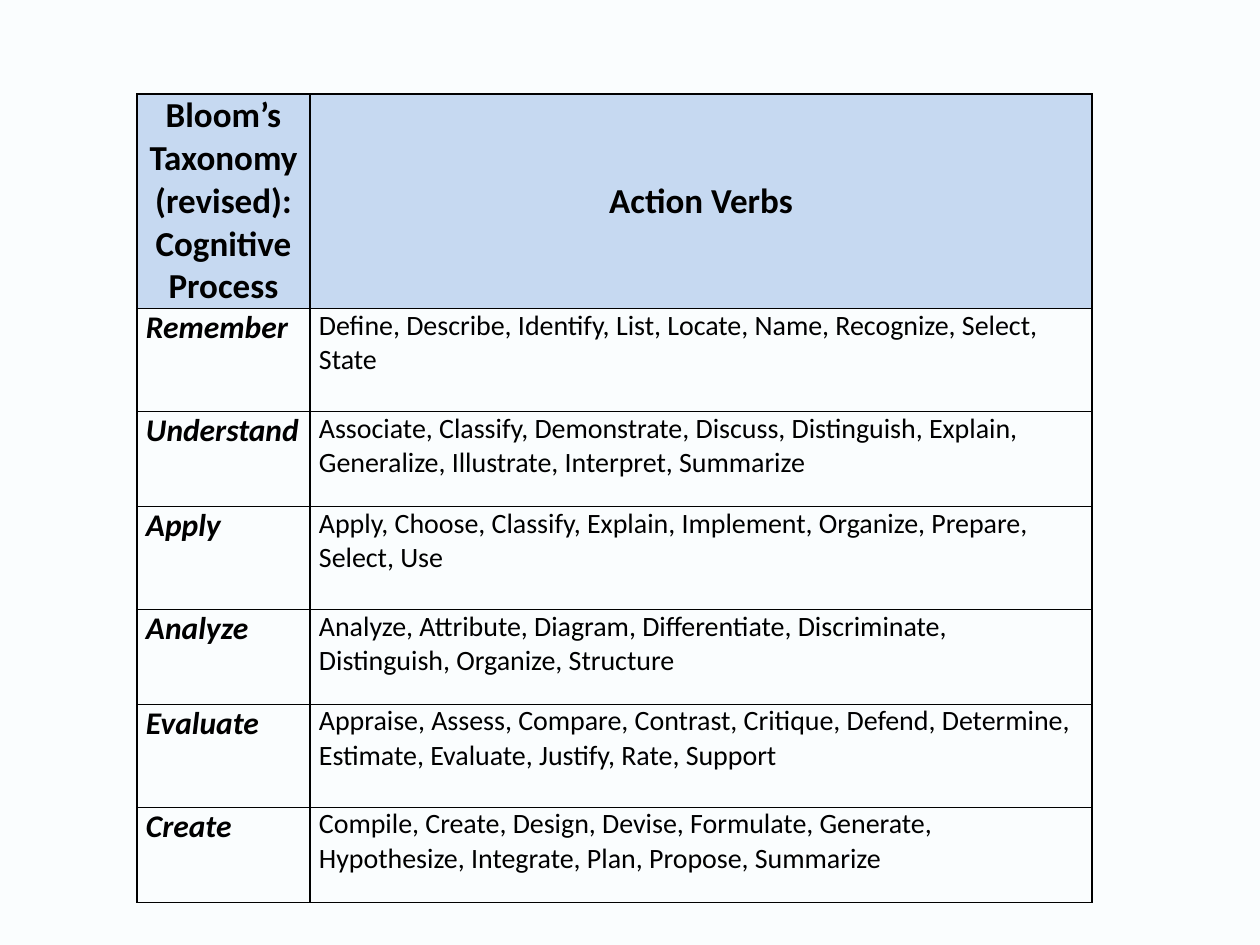
import pptx
import pptx.util
import pptx.dml.color
import pptx.enum.text
import pptx.oxml
import pptx.oxml.ns

FONT = "Calibri"
INK = "000000"
HEAD = "C6D9F1"
PAPER = "FAFDFE"
PAD = 9

HEADS = ["Bloom’s Taxonomy\n(revised):\nCognitive Process", "Action Verbs"]
LEVELS = [
    ("Remember", "Define, Describe, Identify, List, Locate, Name, Recognize, Select, State"),
    ("Understand", "Associate, Classify, Demonstrate, Discuss, Distinguish, Explain, "
                   "Generalize, Illustrate, Interpret, Summarize"),
    ("Apply", "Apply, Choose, Classify, Explain, Implement, Organize, Prepare, Select, Use"),
    ("Analyze", "Analyze, Attribute, Diagram, Differentiate, Discriminate, "
                "Distinguish, Organize, Structure"),
    ("Evaluate", "Appraise, Assess, Compare, Contrast, Critique, Defend, Determine, "
                 "Estimate, Evaluate, Justify, Rate, Support"),
    ("Create", "Compile, Create, Design, Devise, Formulate, Generate, Hypothesize, "
               "Integrate, Plan, Propose, Summarize"),
]


def px(n):
    return pptx.util.Emu(round(n * 914400 / 126))


def color(code):
    return pptx.dml.color.RGBColor.from_string(code)


def border(cell):
    props = cell._tc.get_or_add_tcPr()
    space = pptx.oxml.ns.nsdecls("a")
    for i, side in enumerate(("lnL", "lnR", "lnT", "lnB")):
        line = pptx.oxml.parse_xml(
            f'<a:{side} {space} w="12700"><a:solidFill><a:srgbClr val="{INK}"/>'
            f'</a:solidFill></a:{side}>')
        props.insert(i, line)


def write(cell, text, size, bold=False, italic=False, head=False):
    cell.margin_left = cell.margin_right = px(PAD)
    cell.margin_top = cell.margin_bottom = 0
    cell.text_frame.text = text
    for para in cell.text_frame.paragraphs:
        if head:
            para.alignment = pptx.enum.text.PP_ALIGN.CENTER
        for run in para.runs:
            font = run.font
            font.name, font.size = FONT, pptx.util.Pt(size)
            font.bold, font.italic = bold, italic
            font.color.rgb = color(INK)
    if head:
        cell.vertical_anchor = pptx.enum.text.MSO_ANCHOR.MIDDLE
        cell.fill.solid()
        cell.fill.fore_color.rgb = color(HEAD)
    else:
        cell.vertical_anchor = pptx.enum.text.MSO_ANCHOR.TOP
        cell.fill.background()
    border(cell)


def verbs(slide, x, y, w, h):
    """Table of action verbs for each cognitive level."""
    first, tall, low = 173, 103, 95
    rows = [tall, low] * (len(LEVELS) // 2)
    rows.insert(0, h - sum(rows))
    table = slide.shapes.add_table(len(rows), 2, px(x), px(y), px(w), px(h)).table
    table.first_row = table.horz_banding = False
    for col, size in zip(table.columns, (first, w - first)):
        col.width = px(size)
    for row, size in zip(table.rows, rows):
        row.height = px(size)
    for i, text in enumerate(HEADS):
        write(table.cell(0, i), text, 20, bold=True, head=True)
    for i, (level, words) in enumerate(LEVELS, 1):
        write(table.cell(i, 0), level, 18, bold=True, italic=True)
        write(table.cell(i, 1), words, 16)


def main():
    deck = pptx.Presentation()
    deck.slide_width, deck.slide_height = px(1260), px(945)
    slide = deck.slides.add_slide(deck.slide_layouts[6])
    fill = slide.background.fill
    fill.solid()
    fill.fore_color.rgb = color(PAPER)
    verbs(slide, 137, 94, 955, 804)
    deck.save("out.pptx")


if __name__ == "__main__":
    main()
